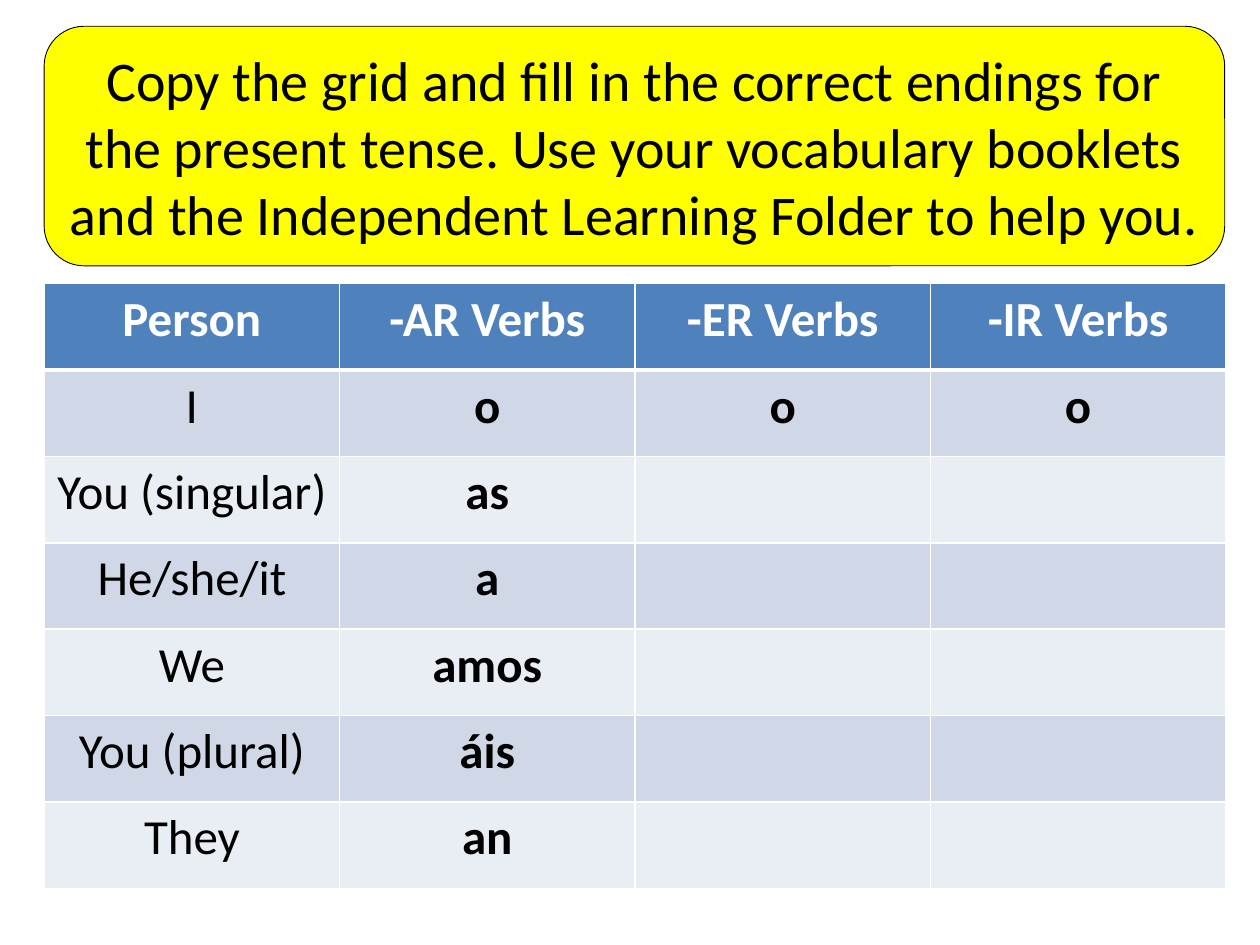
from lxml import etree
from pptx import Presentation
from pptx.dml.color import RGBColor
from pptx.enum.shapes import MSO_SHAPE
from pptx.enum.text import MSO_ANCHOR, MSO_AUTO_SIZE, PP_ALIGN
from pptx.oxml.ns import qn
from pptx.util import Cm, Pt

ROUNDED = MSO_SHAPE.ROUNDED_RECTANGLE
MIDDLE = MSO_ANCHOR.MIDDLE
GROW = MSO_AUTO_SIZE.SHAPE_TO_FIT_TEXT
CENTER = PP_ALIGN.CENTER

HEADER_FILL = "4F81BD"
BAND_FILLS = ["E9EDF4", "D0D8E8"]
LEFT = Cm(0.89)
ROWS = [
    ["Person", "-AR Verbs", "-ER Verbs", "-IR Verbs"],
    ["I", "o", "o", "o"],
    ["You (singular)", "as", "", ""],
    ["He/she/it", "a", "", ""],
    ["We", "amos", "", ""],
    ["You (plural)", "áis", "", ""],
    ["They", "an", "", ""],
]


def color(value):
    return RGBColor.from_string(value)


def write(paragraph, text, size, text_color, bold=False):
    paragraph.text = text
    paragraph.alignment = CENTER
    paragraph.font.name = "Calibri"
    paragraph.font.size = Pt(size)
    paragraph.font.bold = bold
    paragraph.font.color.rgb = color(text_color)


presentation = Presentation()
presentation.slide_width = Cm(25.4)
presentation.slide_height = Cm(19.05)
slide = presentation.slides.add_slide(presentation.slide_layouts[6])

instruction = slide.shapes.add_shape(ROUNDED, LEFT, Cm(0.53), Cm(23.8), Cm(4.83))
instruction.shadow.inherit = False
instruction.fill.solid()
instruction.fill.fore_color.rgb = color("FFFF00")
instruction.line.color.rgb = color("000000")
instruction.line.width = Pt(0.5)
instruction.text_frame.word_wrap = True
instruction.text_frame.auto_size = GROW
instruction.text_frame.vertical_anchor = MIDDLE
write(
    instruction.text_frame.paragraphs[0],
    "Copy the grid and fill in the correct endings for the present tense. "
    "Use your vocabulary booklets and the Independent Learning Folder to help you.",
    32,
    "000000",
)

table = slide.shapes.add_table(
    len(ROWS), len(ROWS[0]), LEFT, Cm(5.72), Cm(23.82), Cm(12.19)
).table

for row_index, row in enumerate(ROWS):
    is_header = row_index == 0
    border_widths = {
        "a:lnL": 1,
        "a:lnR": 1,
        "a:lnT": 3 if row_index == 1 else 1,
        "a:lnB": 3 if is_header else 1,
    }
    for column_index, text in enumerate(row):
        cell = table.cell(row_index, column_index)
        properties = cell._tc.get_or_add_tcPr()
        for tag, width in border_widths.items():
            border = etree.SubElement(properties, qn(tag), w=str(Pt(width)))
            border_fill = etree.SubElement(border, qn("a:solidFill"))
            etree.SubElement(border_fill, qn("a:srgbClr"), val="FFFFFF")
        cell.fill.solid()
        cell.fill.fore_color.rgb = color(HEADER_FILL if is_header else BAND_FILLS[row_index % 2])
        write(
            cell.text_frame.paragraphs[0],
            text,
            28,
            "FFFFFF" if is_header else "000000",
            is_header or column_index > 0,
        )

presentation.save("out.pptx")
